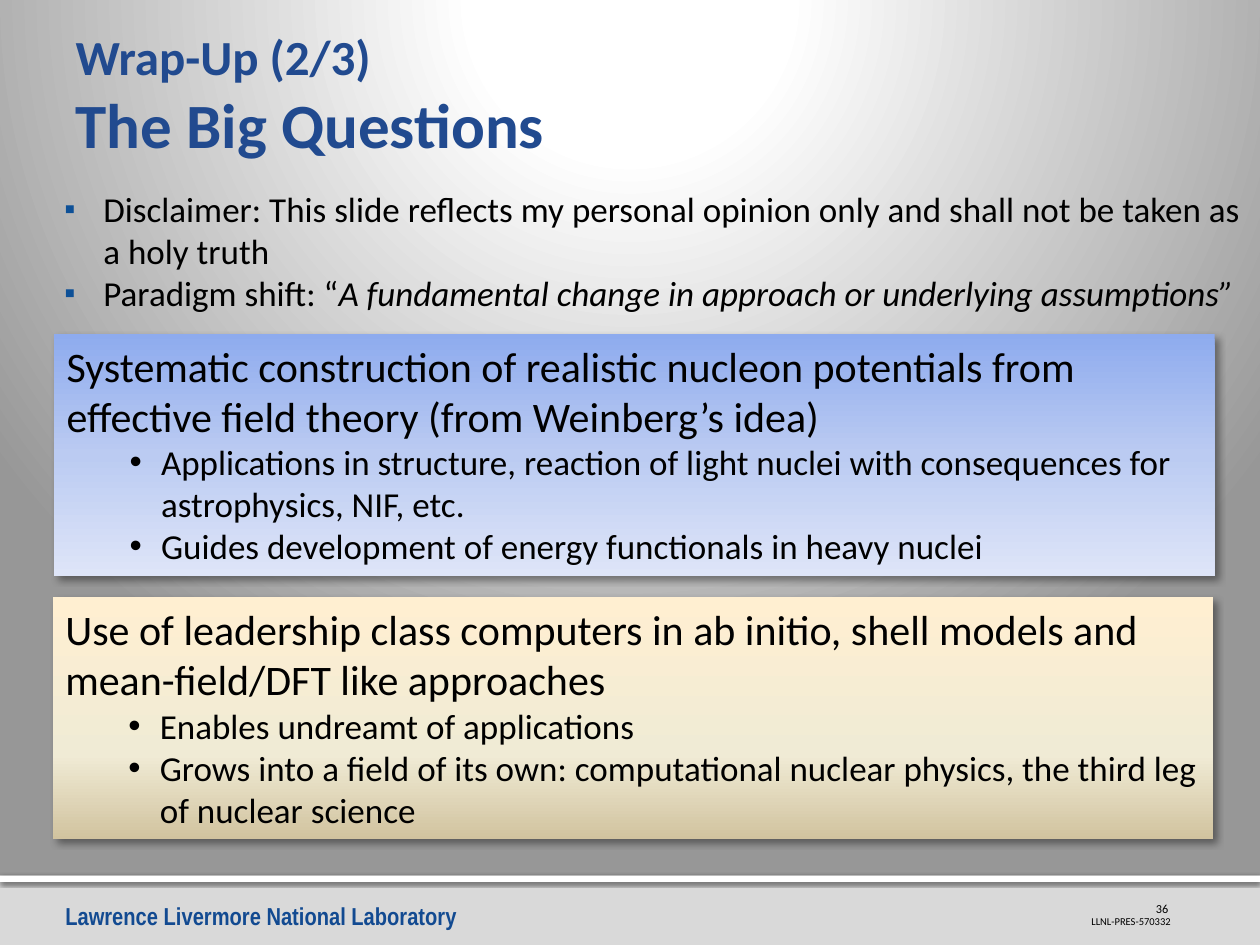
from lxml.etree import SubElement
from pptx import Presentation
from pptx.dml.color import RGBColor
from pptx.enum.shapes import MSO_SHAPE
from pptx.enum.text import MSO_ANCHOR as ANCHOR, PP_ALIGN as ALIGN
from pptx.oxml.ns import qn
from pptx.util import Inches, Pt

THEME = dict(
    font="Calibri", footer_font="Arial Narrow",
    black="000000", title="214A8F", footer="124A91", bullet="0D5097",
    bar="D9D9D9", rule="FFFFFF",
    kicker_size=28, title_size=36, lead_size=24, body_size=20,
    footer_size=14, number_size=7, code_size=6,
    background=[(0, "FFFFFF"), (20, "FFFFFF"), (100, "979797")],
    blue=[(0, "8EABEE"), (50, "BBCBF2"), (100, "DEE5F8")],
    sand=[(0, "FFEFD1"), (65, "F0EBD5"), (100, "D1C39F")],
    box_shadow=(40, 4, 3, 45), bar_shadow=(38, 3.1, 2, 90),
    rule_shadow=(60, 2.5, 0.8, 90),
)

TITLE = ("Wrap-Up (2/3)", "The Big Questions")
INTRO = [
    [("Disclaimer: This slide reflects my personal opinion only and shall "
      "not be taken as a holy truth", False)],
    [("Paradigm shift: “", False),
     ("A fundamental change in approach or underlying assumptions”", True)],
]
BOXES = [
    (0.43, 2.65, "blue",
     "Systematic construction of realistic nucleon potentials from "
     "effective field theory (from Weinberg’s idea)",
     ["Applications in structure, reaction of light nuclei with "
      "consequences for astrophysics, NIF, etc.",
      "Guides development of energy functionals in heavy nuclei"]),
    (0.42, 4.74, "sand",
     "Use of leadership class computers in ab initio, shell models and "
     "mean-field/DFT like approaches",
     ["Enables undreamt of applications",
      "Grows into a field of its own: computational nuclear physics, "
      "the third leg of nuclear science"]),
]
FOOTER = [
    ("Lawrence Livermore National Laboratory", (0.42, 7.1, 3.34, 0.34),
     (0.1, 0.05, 0.1, 0.05), ANCHOR.TOP,
     dict(size="footer_size", font="footer_font", color="footer", bold=True)),
    ("LLNL-PRES-570332", (8.65, 7.21, 0.74, 0.15), (0, 0.05, 0.1, 0),
     ANCHOR.BOTTOM, dict(size="code_size", align=ALIGN.RIGHT)),
    ("36", (8.98, 7.1, 0.39, 0.17), (0.1, 0.05, 0.1, 0.05),
     ANCHOR.TOP, dict(size="number_size", align=ALIGN.RIGHT)),
]


def add_run(p, text, size="body_size", font="font", color="black",
            bold=False, italic=False, align=ALIGN.LEFT):
    p.alignment = align
    r = p.add_run()
    r.text = text
    f = r.font
    f.size, f.name = Pt(THEME[size]), THEME[font]
    f.bold, f.italic = bold, italic
    f.color.rgb = RGBColor.from_string(THEME[color])


def add_bullet(p, char, left, hang, color=None, percent=100):
    pPr = p._p.get_or_add_pPr()
    pPr.set("marL", str(Inches(left)))
    pPr.set("indent", str(-Inches(hang)))
    if color:
        SubElement(SubElement(pPr, qn("a:buClr")), qn("a:srgbClr"),
                   val=THEME[color])
    SubElement(pPr, qn("a:buSzPct"), val=str(percent * 1000))
    SubElement(pPr, qn("a:buFont"), typeface="Arial")
    SubElement(pPr, qn("a:buChar"), char=char)


def set_gradient(fill, parent, stops, circle=None):
    fill.background()
    old = parent.find(qn("a:noFill"))
    grad = parent.makeelement(qn("a:gradFill"), {"rotWithShape": "1"})
    parent.replace(old, grad)
    gs_list = SubElement(grad, qn("a:gsLst"))
    for pos, color in stops:
        gs = SubElement(gs_list, qn("a:gs"), pos=str(pos * 1000))
        SubElement(gs, qn("a:srgbClr"), val=color)
    if circle:
        shade = SubElement(grad, qn("a:path"), {"path": "circle"})
        SubElement(shade, qn("a:fillToRect"),
                   {side: str(v * 1000) for side, v in zip("ltrb", circle)})
    else:
        SubElement(grad, qn("a:lin"), ang="5400000", scaled="0")


def set_frame(tf, insets, anchor=ANCHOR.TOP, wrap=True):
    tf.word_wrap, tf.vertical_anchor = wrap, anchor
    (tf.margin_left, tf.margin_top,
     tf.margin_right, tf.margin_bottom) = map(Inches, insets)
    return tf


def add_text_box(s, at, insets, anchor=ANCHOR.TOP, wrap=True):
    sp = s.shapes.add_textbox(*map(Inches, at))
    return set_frame(sp.text_frame, insets, anchor, wrap)


def add_panel(s, at, shadow, color=None, stops=None):
    sp = s.shapes.add_shape(MSO_SHAPE.RECTANGLE, *map(Inches, at))
    sp.line.fill.background()
    if stops:
        set_gradient(sp.fill, sp._element.spPr, THEME[stops])
    else:
        sp.fill.solid()
        sp.fill.fore_color.rgb = RGBColor.from_string(THEME[color])
    sp.shadow.inherit = False
    alpha, blur, dist, angle = THEME[shadow]
    effects = sp._element.spPr.find(qn("a:effectLst"))
    outer = SubElement(effects, qn("a:outerShdw"), blurRad=str(Pt(blur)),
                       dist=str(Pt(dist)), dir=str(angle * 60000),
                       algn="tl", rotWithShape="0")
    clr = SubElement(outer, qn("a:srgbClr"), val=THEME["black"])
    SubElement(clr, qn("a:alpha"), val=str(alpha * 1000))
    return sp


def next_paragraph(tf, i):
    return tf.add_paragraph() if i else tf.paragraphs[0]


def main():
    prs = Presentation()
    prs.slide_width, prs.slide_height = Inches(10), Inches(7.5)
    s = prs.slides.add_slide(prs.slide_layouts[5])
    fill = s.background.fill
    fill.background()
    set_gradient(fill, s.element.find(".//" + qn("p:bgPr")),
                 THEME["background"], circle=(10, -25, 10, 125))

    add_panel(s, (0, 6.95, 10, 0.55), "bar_shadow", color="bar")
    add_panel(s, (0, 6.95, 10, 0.05), "rule_shadow", color="rule")
    for text, at, insets, anchor, style in FOOTER:
        tf = add_text_box(s, at, insets, anchor, wrap=False)
        add_run(tf.paragraphs[0], text, **style)

    title = s.shapes.title
    title.left, title.top, title.width, title.height = map(
        Inches, (0.5, 0.24, 9, 1.09))
    tf = set_frame(title.text_frame, (0.1, 0.05, 0.05, 0.05), ANCHOR.BOTTOM)
    p = tf.paragraphs[0]
    add_run(p, TITLE[0], size="kicker_size", color="title", bold=True)
    p.add_line_break()
    add_run(p, TITLE[1], size="title_size", color="title", bold=True)

    tf = add_text_box(s, (0.32, 1.39, 9.68, 1.24), (0.06, 0.1, 0.1, 0.05))
    for i, runs in enumerate(INTRO):
        p = next_paragraph(tf, i)
        add_bullet(p, "▪", 0.44, 0.31, color="bullet", percent=90)
        for text, italic in runs:
            add_run(p, text, italic=italic)

    for left, top, stops, lead, points in BOXES:
        sp = add_panel(s, (left, top, 9.21, 1.92), "box_shadow", stops=stops)
        tf = set_frame(sp.text_frame, (0.1, 0.05, 0.1, 0.05))
        add_run(tf.paragraphs[0], lead, size="lead_size")
        for point in points:
            p = tf.add_paragraph()
            p.level = 1
            add_bullet(p, "•", 0.75, 0.25)
            add_run(p, point)

    prs.save("out.pptx")


if __name__ == "__main__":
    main()
